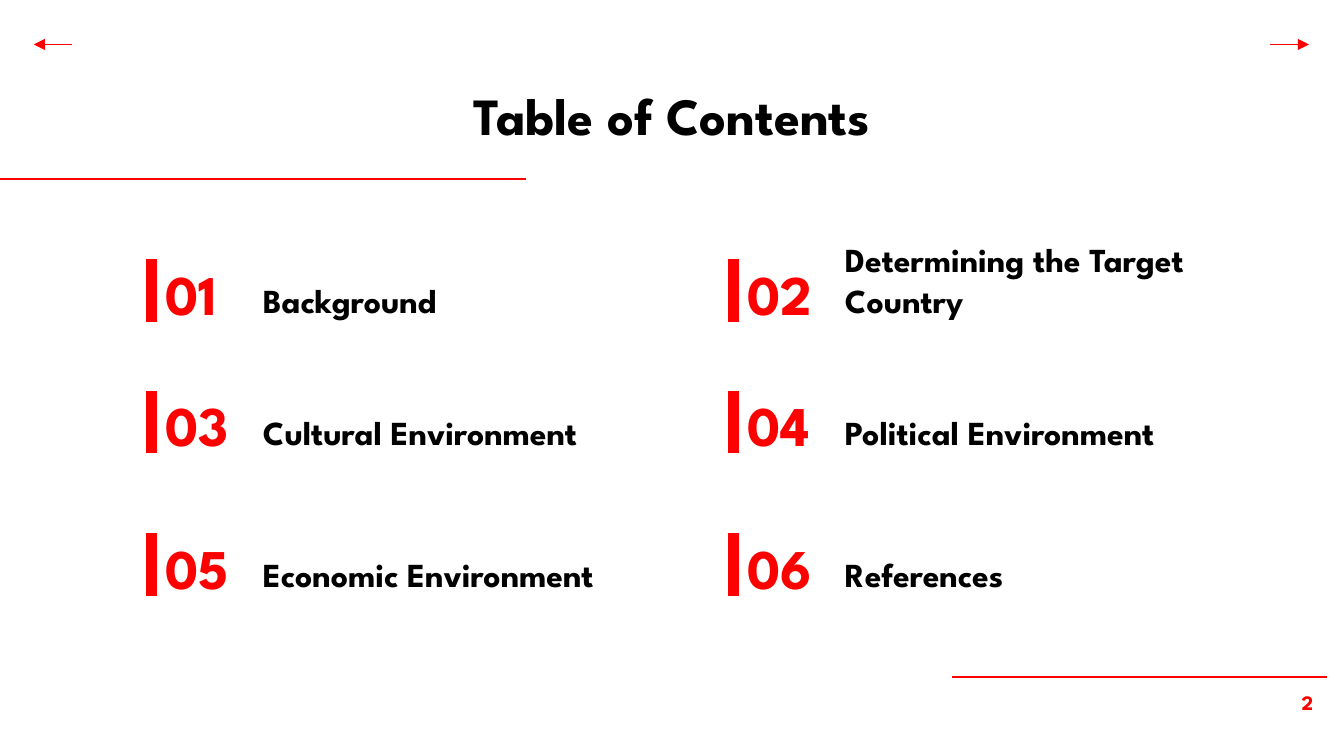
from lxml import etree
from pptx import Presentation
from pptx import util as u
from pptx.dml.color import RGBColor
from pptx.enum import shapes, text
from pptx.oxml.ns import qn

FONT = "League Spartan"
RED = "FD0000"
BLACK = "000000"
TOPICS = [
    "Background",
    "Determining the Target Country",
    "Cultural Environment",
    "Political Environment",
    "Economic Environment",
    "References",
]
ROW_TOPS = [4.65, 7.14, 9.83]
COLUMN_STEP = 11


def color(value):
    return RGBColor.from_string(value)


def write_text(shape, content, size, fill, align=text.PP_ALIGN.LEFT,
               anchor=text.MSO_ANCHOR.TOP, inset_left=0.25):
    frame = shape.text_frame
    frame.word_wrap = True
    frame.auto_size = text.MSO_AUTO_SIZE.NONE
    frame.vertical_anchor = anchor
    frame.margin_left = u.Cm(inset_left)
    frame.margin_top = frame.margin_right = frame.margin_bottom = u.Cm(0.25)
    frame.text = content
    paragraph = frame.paragraphs[0]
    paragraph.alignment = align
    paragraph.font.name = FONT
    paragraph.font.size = u.Pt(size)
    paragraph.font.bold = True
    paragraph.font.color.rgb = color(fill)


def add_text(slide, box, content, size, fill, **options):
    shape = slide.shapes.add_textbox(*map(u.Cm, box))
    write_text(shape, content, size, fill, **options)


def set_title(slide, box, content):
    title = slide.shapes.title
    title.left, title.top, title.width, title.height = map(u.Cm, box)
    write_text(title, content, 28, BLACK, align=text.PP_ALIGN.CENTER)


def add_line(slide, start, end, width=0.75, arrow=False):
    points = map(u.Cm, (*start, *end))
    line = slide.shapes.add_connector(shapes.MSO_CONNECTOR.STRAIGHT, *points)
    line.line.color.rgb = color(RED)
    line.line.width = u.Pt(width)
    if arrow:
        outline = line.line._get_or_add_ln()
        etree.SubElement(outline, qn("a:tailEnd"), type="triangle")
    etree.SubElement(line._element.spPr, qn("a:effectLst"))


def add_topic(slide, index, topic):
    row, column = divmod(index, 2)
    top = ROW_TOPS[row]
    offset = column * COLUMN_STEP
    bar_x = 2.86 + offset
    add_text(slide, (4.72 + offset, top + 0.18, 8.23, 1.47), topic, 18, BLACK,
             anchor=text.MSO_ANCHOR.BOTTOM)
    add_text(slide, (3.12 + offset, top, 1.6, 1.65), f"{index + 1:02}", 30, RED,
             inset_left=0)
    add_line(slide, (bar_x, top + 0.25), (bar_x, top + 1.43), width=6)


def main():
    presentation = Presentation()
    presentation.slide_width = u.Cm(25.4)
    presentation.slide_height = u.Cm(14.29)
    slide = presentation.slides.add_slide(presentation.slide_layouts[5])

    add_line(slide, (-0.05, 3.38), (9.95, 3.38))
    add_line(slide, (18, 12.8), (25.07, 12.8))
    add_text(slide, (23.44, 12.8, 1.63, 1.09), "2", 11, RED,
             align=text.PP_ALIGN.RIGHT)
    set_title(slide, (4.09, 1.32, 17.22, 1.6), "Table of Contents")
    for index, topic in enumerate(TOPICS):
        add_topic(slide, index, topic)
    add_line(slide, (24, 0.84), (24.74, 0.84), arrow=True)
    add_line(slide, (1.37, 0.84), (0.64, 0.84), arrow=True)

    presentation.save("out.pptx")


if __name__ == "__main__":
    main()
